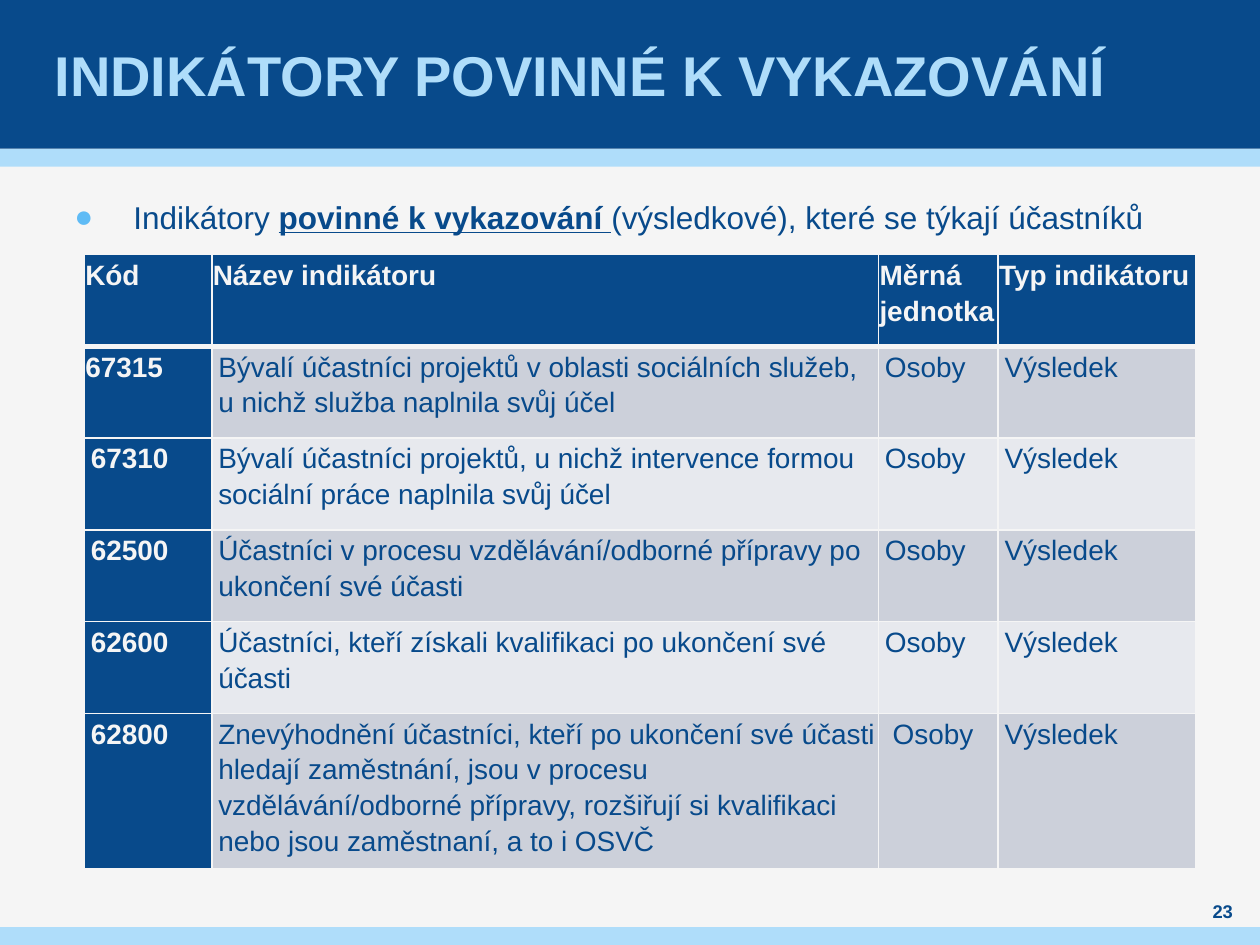
from lxml import etree
from pptx import Presentation
from pptx.dml.color import RGBColor
from pptx.enum import shapes, text
from pptx.oxml import ns
from pptx.util import Cm, Pt

NAVY = RGBColor(0x08, 0x4A, 0x8B)
SKY = RGBColor(0xAF, 0xDD, 0xFA)
BULLET_BLUE = RGBColor(0x5F, 0xBB, 0xF5)
PAPER = RGBColor(0xF5, 0xF5, 0xF5)
BAND_DARK = RGBColor(0xCC, 0xD0, 0xDA)
BAND_LIGHT = RGBColor(0xE7, 0xE9, 0xEE)

WIDTH, HEIGHT = Cm(25.4), Cm(19.05)
HEADER_HEIGHT, STRIPE_HEIGHT = Cm(3), Cm(0.36)
COLUMN_WIDTHS = [Cm(2.57), Cm(13.44), Cm(2.41), Cm(3.99)]
ROW_HEIGHTS = [Cm(1.85)] * 5 + [Cm(2.54)]

INDICATORS = [
    ("Kód", "Název indikátoru", "Měrná jednotka", "Typ indikátoru"),
    ("67315", "Bývalí účastníci projektů v oblasti sociálních služeb, u nichž "
     "služba naplnila svůj účel", "Osoby", "Výsledek"),
    ("67310", "Bývalí účastníci projektů, u nichž intervence formou sociální "
     "práce naplnila svůj účel", "Osoby", "Výsledek"),
    ("62500", "Účastníci v procesu vzdělávání/odborné přípravy po ukončení "
     "své účasti", "Osoby", "Výsledek"),
    ("62600", "Účastníci, kteří získali kvalifikaci po ukončení své účasti",
     "Osoby", "Výsledek"),
    ("62800", "Znevýhodnění účastníci, kteří po ukončení své účasti hledají "
     "zaměstnání, jsou v procesu vzdělávání/odborné přípravy, rozšiřují si "
     "kvalifikaci nebo jsou zaměstnaní, a to i OSVČ", " Osoby", "Výsledek"),
]


def add_band(slide, top, height, color):
    band = slide.shapes.add_shape(
        shapes.MSO_SHAPE.RECTANGLE, 0, top, WIDTH, height)
    band.shadow.inherit = False
    band.fill.solid()
    band.fill.fore_color.rgb = color
    band.line.fill.background()


def add_run(paragraph, words, size, color, bold=False, underline=False):
    run = paragraph.add_run()
    run.text = words
    font = run.font
    font.name, font.size = "Arial", Pt(size)
    font.bold, font.underline = bold, underline
    font.color.rgb = color


def add_text_frame(slide, left, top, width, height, side_margin=0,
                   anchor=text.MSO_ANCHOR.MIDDLE):
    frame = slide.shapes.add_textbox(left, top, width, height).text_frame
    frame.word_wrap = True
    frame.vertical_anchor = anchor
    frame.margin_left = frame.margin_right = side_margin
    frame.margin_top = frame.margin_bottom = 0
    return frame


def set_bullet(paragraph, indent):
    properties = paragraph._p.get_or_add_pPr()
    properties.set("marL", str(indent))
    properties.set("indent", str(-indent))
    color = etree.SubElement(properties, ns.qn("a:buClr"))
    etree.SubElement(color, ns.qn("a:srgbClr"), val=str(BULLET_BLUE))
    etree.SubElement(properties, ns.qn("a:buFont"), typeface="Arial")
    etree.SubElement(properties, ns.qn("a:buChar"), char="●")


def set_borders(cell, bottom_width):
    properties = cell._tc.get_or_add_tcPr()
    widths = {"lnL": 1, "lnR": 1, "lnT": 1, "lnB": bottom_width}
    for position, (side, width) in enumerate(widths.items()):
        border = etree.Element(ns.qn(f"a:{side}"), w=str(Pt(width)))
        fill = etree.SubElement(border, ns.qn("a:solidFill"))
        etree.SubElement(fill, ns.qn("a:srgbClr"), val=str(PAPER))
        properties.insert(position, border)


def fill_cell(cell, words, row, column):
    is_key = row == 0 or column == 0
    set_borders(cell, 3 if row == 0 else 1)
    cell.fill.solid()
    band = BAND_DARK if row % 2 else BAND_LIGHT
    cell.fill.fore_color.rgb = NAVY if is_key else band
    cell.margin_left = cell.margin_right = cell.margin_top = Cm(0.02)
    cell.margin_bottom = 0

    paragraph = cell.text_frame.paragraphs[0]
    paragraph.line_spacing = 1.15
    if row == 0 or (row, column) == (1, 0):
        paragraph.space_after = Pt(10)
    else:
        paragraph.space_before = paragraph.space_after = Pt(3)
        paragraph._p.get_or_add_pPr().set("marL", str(Cm(0.11)))
    add_run(paragraph, words, 16, PAPER if is_key else NAVY, bold=is_key)


def add_indicator_table(slide):
    table = slide.shapes.add_table(
        len(ROW_HEIGHTS), len(COLUMN_WIDTHS), Cm(1.7), Cm(5.13),
        sum(COLUMN_WIDTHS), sum(ROW_HEIGHTS)).table
    for column, width in zip(table.columns, COLUMN_WIDTHS):
        column.width = width
    for row, height in zip(table.rows, ROW_HEIGHTS):
        row.height = height
    for row, indicator in enumerate(INDICATORS):
        for column, words in enumerate(indicator):
            fill_cell(table.cell(row, column), words, row, column)


def add_title(slide):
    title = add_text_frame(
        slide, Cm(1), 0, Cm(23.4), HEADER_HEIGHT, side_margin=Cm(0.1))
    add_run(title.paragraphs[0], "INDIKÁTORY POVINNÉ K VYKAZOVÁNÍ", 32, SKY,
            bold=True)


def add_introduction(slide):
    frame = add_text_frame(slide, Cm(1.5), Cm(3.73), Cm(22.4), Cm(13.28),
                           anchor=text.MSO_ANCHOR.TOP)
    introduction = frame.paragraphs[0]
    introduction.line_spacing = Pt(28.8)
    introduction.space_before = introduction.space_after = Pt(6)
    set_bullet(introduction, Cm(1.19))
    add_run(introduction, "Indikátory ", 18, NAVY)
    add_run(introduction, "povinné k vykazování ", 18, NAVY, bold=True,
            underline=True)
    add_run(introduction, "(výsledkové), které se týkají účastníků", 18, NAVY)


def add_page_number(slide):
    frame = add_text_frame(slide, Cm(24), Cm(18.11), Cm(1.3), Cm(0.51))
    number = frame.paragraphs[0]
    number.alignment = text.PP_ALIGN.CENTER
    add_run(number, "23", 10.5, NAVY, bold=True)


def main():
    deck = Presentation()
    deck.slide_width, deck.slide_height = WIDTH, HEIGHT
    slide = deck.slides.add_slide(deck.slide_layouts[6])
    slide.background.fill.solid()
    slide.background.fill.fore_color.rgb = PAPER

    add_band(slide, HEADER_HEIGHT, STRIPE_HEIGHT, SKY)
    add_band(slide, 0, HEADER_HEIGHT, NAVY)
    add_band(slide, HEIGHT - STRIPE_HEIGHT, STRIPE_HEIGHT, SKY)
    add_title(slide)
    add_introduction(slide)
    add_page_number(slide)
    add_indicator_table(slide)
    deck.save("out.pptx")


if __name__ == "__main__":
    main()
